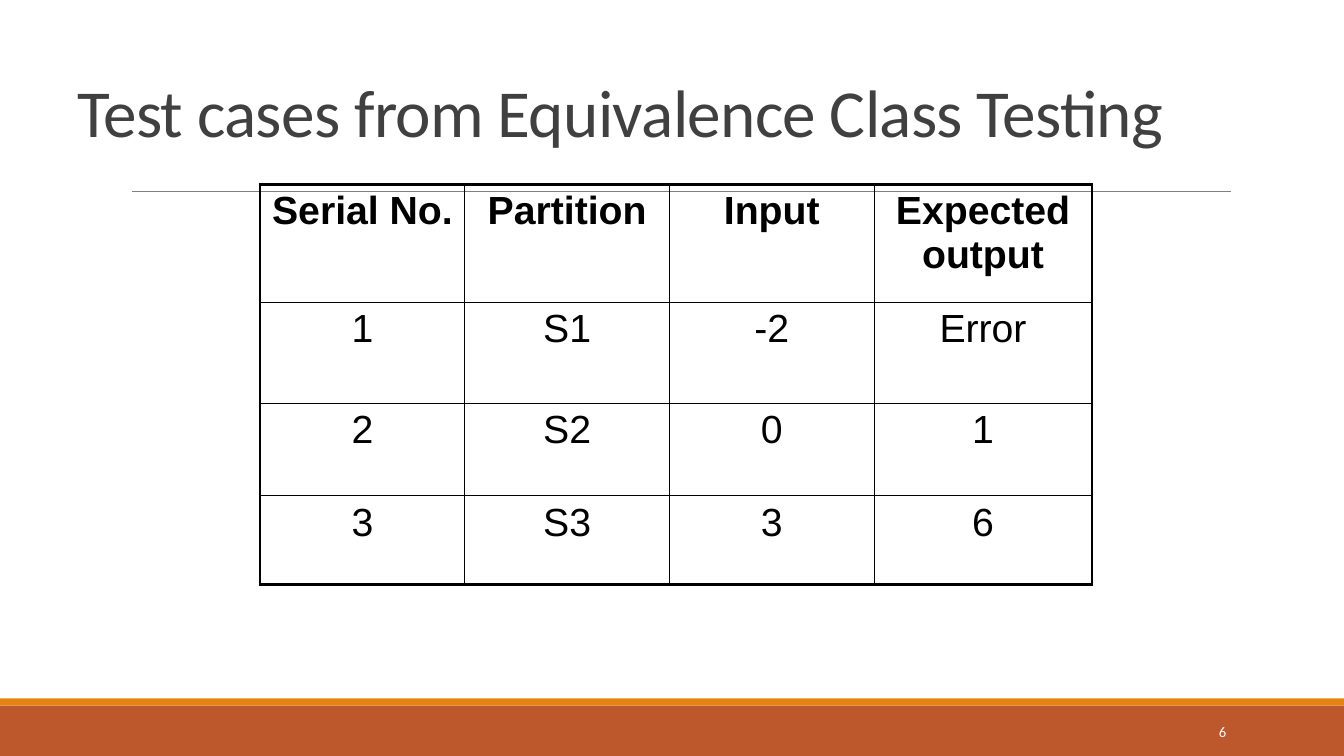
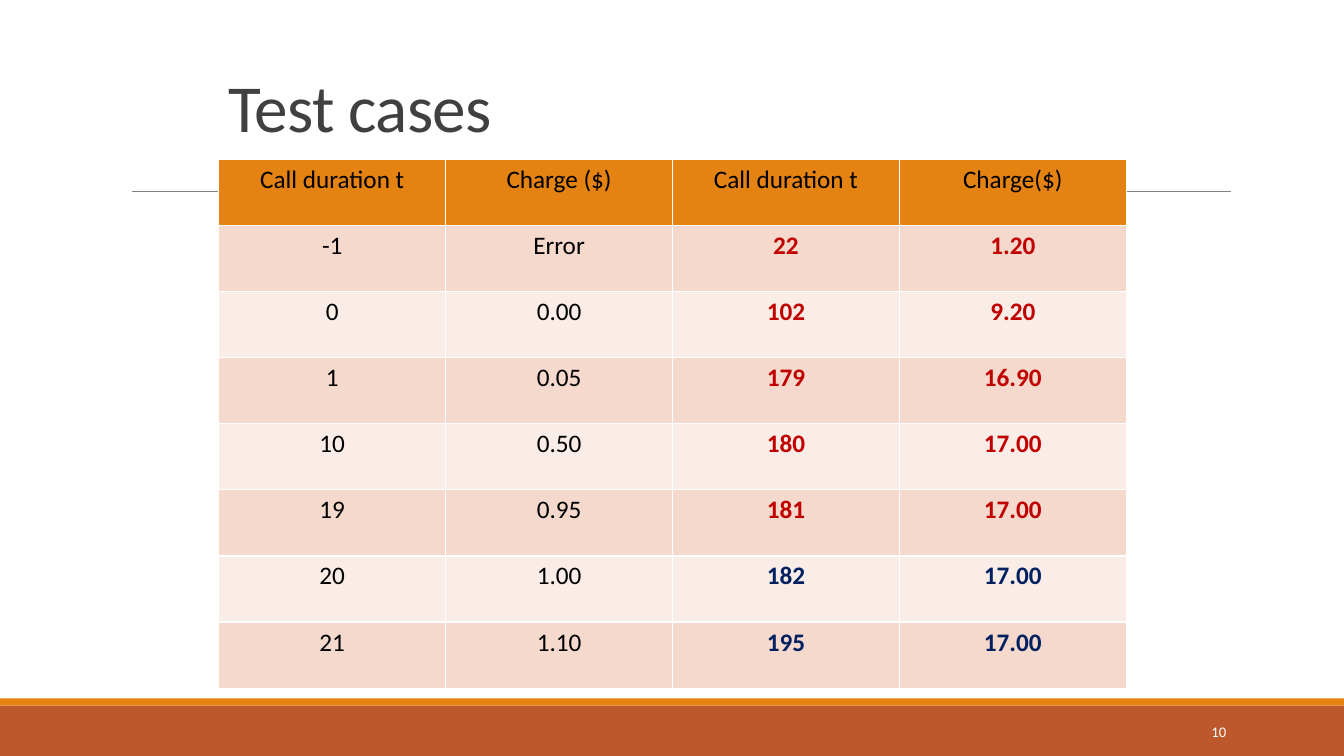
from lxml.etree import SubElement
from pptx import Presentation
from pptx.dml.color import RGBColor
from pptx.enum.shapes import MSO_CONNECTOR, MSO_SHAPE
from pptx.enum.text import MSO_ANCHOR, PP_ALIGN
from pptx.oxml.ns import qn
from pptx.util import Inches, Pt

WIDTH, HEIGHT = 13.33, 7.5
BLACK, WHITE = "000000", "FFFFFF"
ORANGE, RUST, GREY, CHARCOAL = "E48312", "BD582C", "808080", "404040"
RED, NAVY = "C00000", "002060"
BAND_FILLS = ("F5D9CC", "FAEDE7")

PARTITION_CASES = [
    ("Serial No.", "Partition", "Input", "Expected output"),
    ("1", "S1", "-2", "Error"),
    ("2", "S2", "0", "1"),
    ("3", "S3", "3", "6"),
]
CALL_CHARGES = [
    ("Call duration t", "Charge ($)", "Call duration t", "Charge($)"),
    ("-1", "Error", "22", "1.20"),
    ("0", "0.00", "102", "9.20"),
    ("1", "0.05", "179", "16.90"),
    ("10", "0.50", "180", "17.00"),
    ("19", "0.95", "181", "17.00"),
    ("20", "1.00", "182", "17.00"),
    ("21", "1.10", "195", "17.00"),
]


def color(hex_code):
    return RGBColor.from_string(hex_code)


def inches(box):
    return [Inches(length) for length in box]


def write(frame, text, size, hex_code=BLACK, font="Calibri", bold=False,
          align=PP_ALIGN.LEFT, line_spacing=None, tracking=None):
    paragraph = frame.paragraphs[0]
    paragraph.alignment = align
    paragraph.line_spacing = line_spacing
    run = paragraph.add_run()
    run.text = text
    run.font.size = Pt(size)
    run.font.name = font
    run.font.bold = bold
    run.font.color.rgb = color(hex_code)
    if tracking is not None:
        run._r.get_or_add_rPr().set("spc", str(int(tracking * 100)))


def add_label(slide, box, text, anchor, **text_format):
    frame = slide.shapes.add_textbox(*inches(box)).text_frame
    frame.word_wrap = True
    frame.vertical_anchor = anchor
    write(frame, text, **text_format)


def add_band(slide, box, hex_code):
    band = slide.shapes.add_shape(MSO_SHAPE.RECTANGLE, *inches(box))
    band.shadow.inherit = False
    band.fill.solid()
    band.fill.fore_color.rgb = color(hex_code)
    band.line.fill.background()


def add_title_rule(slide, left, right, y):
    rule = slide.shapes.add_connector(
        MSO_CONNECTOR.STRAIGHT, *inches((left, y, right, y)))
    rule.line.color.rgb = color(GREY)
    rule.line.width = Pt(0.5)
    SubElement(rule._element.spPr, qn("a:effectLst"))


def add_page(deck, title, title_box, number):
    slide = deck.slides.add_slide(deck.slide_layouts[6])
    add_band(slide, (0, 7, WIDTH, 0.5), RUST)
    add_band(slide, (0, 6.93, WIDTH, 0.07), ORANGE)
    add_title_rule(slide, 1.31, 12.21, 1.9)
    add_label(slide, title_box, title, MSO_ANCHOR.BOTTOM, size=48,
              hex_code=CHARCOAL, line_spacing=0.85, tracking=-0.5)
    add_label(slide, (10.83, 7.06, 1.43, 0.4), number, MSO_ANCHOR.MIDDLE,
              size=10.5, hex_code=WHITE, align=PP_ALIGN.RIGHT)
    return slide


def set_borders(cell, hex_code, widths):
    properties = cell._tc.get_or_add_tcPr()
    for side, width in zip("LRTB", widths):
        border = SubElement(properties, qn(f"a:ln{side}"), w=str(Pt(width)))
        fill = SubElement(border, qn("a:solidFill"))
        SubElement(fill, qn("a:srgbClr"), val=hex_code)


def add_grid(slide, left, top, column_widths, row_heights, rows,
             border, edge_width, cell_style):
    box = (left, top, sum(column_widths), sum(row_heights))
    table = slide.shapes.add_table(
        len(rows), len(column_widths), *inches(box)).table
    table.first_row = False
    table.horz_banding = False
    for column, width in zip(table.columns, column_widths):
        column.width = Inches(width)
    for row, height in zip(table.rows, row_heights):
        row.height = Inches(height)
    last_row, last_column = len(rows) - 1, len(column_widths) - 1
    for r, values in enumerate(rows):
        for c, value in enumerate(values):
            cell = table.cell(r, c)
            on_edge = (c == 0, c == last_column, r == 0, r == last_row)
            set_borders(cell, border, [edge_width if e else 1 for e in on_edge])
            fill, text_format = cell_style(r, c)
            if fill:
                cell.fill.solid()
                cell.fill.fore_color.rgb = color(fill)
            else:
                cell.fill.background()
            write(cell.text_frame, value, align=PP_ALIGN.CENTER, **text_format)


def partition_style(row, column):
    return None, dict(size=28, font="Arial", bold=row == 0)


def charge_style(row, column):
    if row == 0:
        return ORANGE, dict(size=18)
    fill = BAND_FILLS[(row - 1) % 2]
    if column < 2:
        return fill, dict(size=18)
    return fill, dict(size=18, bold=True, hex_code=RED if row < 6 else NAVY)


def add_partition_slide(deck):
    slide = add_page(deck, "Test cases from Equivalence Class Testing",
                     (0.67, 0.3, 12, 1.25), "6")
    add_grid(slide, 2.58, 1.83, [2.03, 2.03, 2.03, 2.16],
             [1.17, 1, 0.92, 0.88], PARTITION_CASES, BLACK, 2.25,
             partition_style)


def add_charge_slide(deck):
    slide = add_page(deck, "Test cases", (2.17, 0.25, 9, 1.25), "10")
    row_count = len(CALL_CHARGES)
    add_grid(slide, 2.17, 1.58, [2.25] * 4, [5.25 / row_count] * row_count,
             CALL_CHARGES, WHITE, 1, charge_style)


def main():
    deck = Presentation()
    deck.slide_width, deck.slide_height = inches((WIDTH, HEIGHT))
    add_partition_slide(deck)
    add_charge_slide(deck)
    deck.save("out.pptx")


if __name__ == "__main__":
    main()
